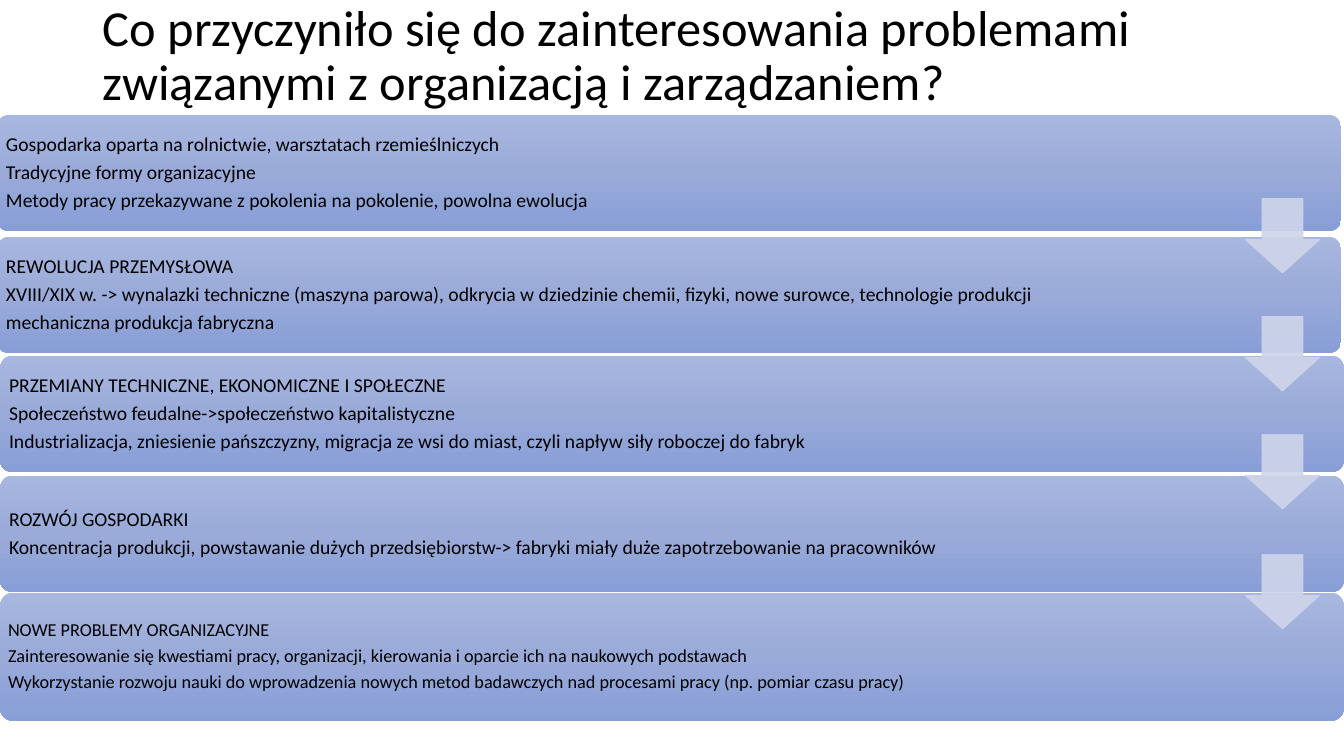
from copy import deepcopy
from dataclasses import dataclass

from lxml import etree
from pptx import Presentation
from pptx.dml.color import RGBColor
from pptx.enum.shapes import MSO_SHAPE
from pptx.enum.text import MSO_ANCHOR, MSO_AUTO_SIZE, PP_ALIGN
from pptx.oxml.ns import qn
from pptx.util import Inches, Pt

ROUNDED = MSO_SHAPE.ROUNDED_RECTANGLE
DOWN_ARROW = MSO_SHAPE.DOWN_ARROW
MIDDLE = MSO_ANCHOR.MIDDLE
NO_FIT = MSO_AUTO_SIZE.NONE
LEFT = PP_ALIGN.LEFT

BLACK = RGBColor(0x00, 0x00, 0x00)
BAR_STOPS = [
    (0, RGBColor(0xA8, 0xB7, 0xDF)),
    (0.5, RGBColor(0x9A, 0xAB, 0xD9)),
    (1, RGBColor(0x88, 0x9E, 0xD7)),
]
ARROW_COLOR = RGBColor(0xCF, 0xD5, 0xEA)
ARROW_OPACITY = 90

FONT = "Calibri"
SLIDE_W, SLIDE_H = 13.33, 7.5
TEXT_W = 11.3
TEXT_INSET = 0.03
ARROW_LEFT, ARROW_SIZE = 12.35, 0.74
ARROW_TOPS = [1.97, 3.14, 4.31, 5.5]


@dataclass
class Stage:
    left: float
    top: float
    lines: list[str]
    height: float = 1.15
    size: int = 14
    margin: float = 0.06


STAGES = [
    Stage(-0.03, 1.14, [
        "Gospodarka oparta na rolnictwie, warsztatach rzemieślniczych",
        "Tradycyjne formy organizacyjne",
        "Metody pracy przekazywane z pokolenia na pokolenie, powolna ewolucja",
    ]),
    Stage(-0.03, 2.35, [
        "REWOLUCJA PRZEMYSŁOWA",
        "XVIII/XIX w. -> wynalazki techniczne (maszyna parowa), odkrycia w dziedzinie "
        "chemii, fizyki, nowe surowce, technologie produkcji",
        "mechaniczna produkcja fabryczna",
    ]),
    Stage(0, 3.53, [
        "PRZEMIANY TECHNICZNE, EKONOMICZNE I SPOŁECZNE",
        "Społeczeństwo feudalne->społeczeństwo kapitalistyczne",
        "Industrializacja, zniesienie pańszczyzny, migracja ze wsi do miast, "
        "czyli napływ siły roboczej do fabryk",
    ]),
    Stage(0, 4.72, [
        "ROZWÓJ GOSPODARKI",
        "Koncentracja produkcji, powstawanie dużych przedsiębiorstw-> fabryki miały "
        "duże zapotrzebowanie na pracowników",
    ]),
    Stage(0, 5.88, [
        "NOWE PROBLEMY ORGANIZACYJNE",
        "Zainteresowanie się kwestiami pracy, organizacji, kierowania i oparcie ich "
        "na naukowych podstawach",
        "Wykorzystanie rozwoju nauki do wprowadzenia nowych metod badawczych nad "
        "procesami pracy (np. pomiar czasu pracy)",
    ], height=1.27, size=13, margin=0.05),
]


def set_attrs(obj, values: dict) -> None:
    for name, value in values.items():
        setattr(obj, name, value)


def add_paragraph(p, text: str, size: int, after: float = 0) -> None:
    set_attrs(p, {"alignment": LEFT, "line_spacing": 0.9,
                  "space_before": Pt(0), "space_after": Pt(after)})
    r = p.add_run()
    r.text = text
    set_attrs(r.font, {"name": FONT, "size": Pt(size)})
    r.font.color.rgb = BLACK


def add_title(s, text: str) -> None:
    sp = s.shapes.title
    set_attrs(sp, {"left": Inches(0.92), "top": Inches(0),
                   "width": Inches(11.43), "height": Inches(1.14)})
    tf = sp.text_frame
    set_attrs(tf, {"vertical_anchor": MIDDLE, "word_wrap": True, "auto_size": NO_FIT})
    add_paragraph(tf.paragraphs[0], text, 36)


def add_bar(s, stage: Stage) -> None:
    sp = s.shapes.add_shape(ROUNDED, Inches(stage.left), Inches(stage.top),
                            Inches(SLIDE_W), Inches(stage.height))
    sp.adjustments[0] = 0.1
    sp.shadow.inherit = False
    sp.line.fill.background()
    sp.fill.gradient()
    sp.fill.gradient_angle = 270
    first = next(sp._element.spPr.iter(qn("a:gs")))
    first.addnext(deepcopy(first))
    for stop, (position, color) in zip(sp.fill.gradient_stops, BAR_STOPS):
        stop.position = position
        stop.color.rgb = color


def add_stage_text(s, stage: Stage) -> None:
    sp = s.shapes.add_textbox(Inches(stage.left + TEXT_INSET), Inches(stage.top + TEXT_INSET),
                              Inches(TEXT_W), Inches(stage.height - 2 * TEXT_INSET))
    tf = sp.text_frame
    set_attrs(tf, {"word_wrap": True, "vertical_anchor": MIDDLE, "auto_size": NO_FIT})
    set_attrs(tf, {f"margin_{side}": Inches(stage.margin)
                   for side in ("left", "top", "right", "bottom")})
    for i, line in enumerate(stage.lines):
        p = tf.add_paragraph() if i else tf.paragraphs[0]
        add_paragraph(p, line, stage.size, 0.35 * stage.size)


def add_arrow(s, top: float) -> None:
    sp = s.shapes.add_shape(DOWN_ARROW, Inches(ARROW_LEFT), Inches(top),
                            Inches(ARROW_SIZE), Inches(ARROW_SIZE))
    sp.adjustments[0] = 0.55
    sp.adjustments[1] = 0.45
    sp.shadow.inherit = False
    sp.line.width = Pt(0.5)
    for fill in (sp.fill, sp.line.fill):
        fill.solid()
        fill.fore_color.rgb = ARROW_COLOR
    for color in sp._element.spPr.iter(qn("a:srgbClr")):
        etree.SubElement(color, qn("a:alpha"), val=str(ARROW_OPACITY * 1000))


def main() -> None:
    prs = Presentation()
    set_attrs(prs, {"slide_width": Inches(SLIDE_W), "slide_height": Inches(SLIDE_H)})
    s = prs.slides.add_slide(prs.slide_layouts[5])
    add_title(s, "Co przyczyniło się do zainteresowania problemami "
                 "związanymi z organizacją i zarządzaniem?")
    for stage in STAGES:
        add_bar(s, stage)
        add_stage_text(s, stage)
    for top in ARROW_TOPS:
        add_arrow(s, top)
    prs.save("out.pptx")


if __name__ == "__main__":
    main()
